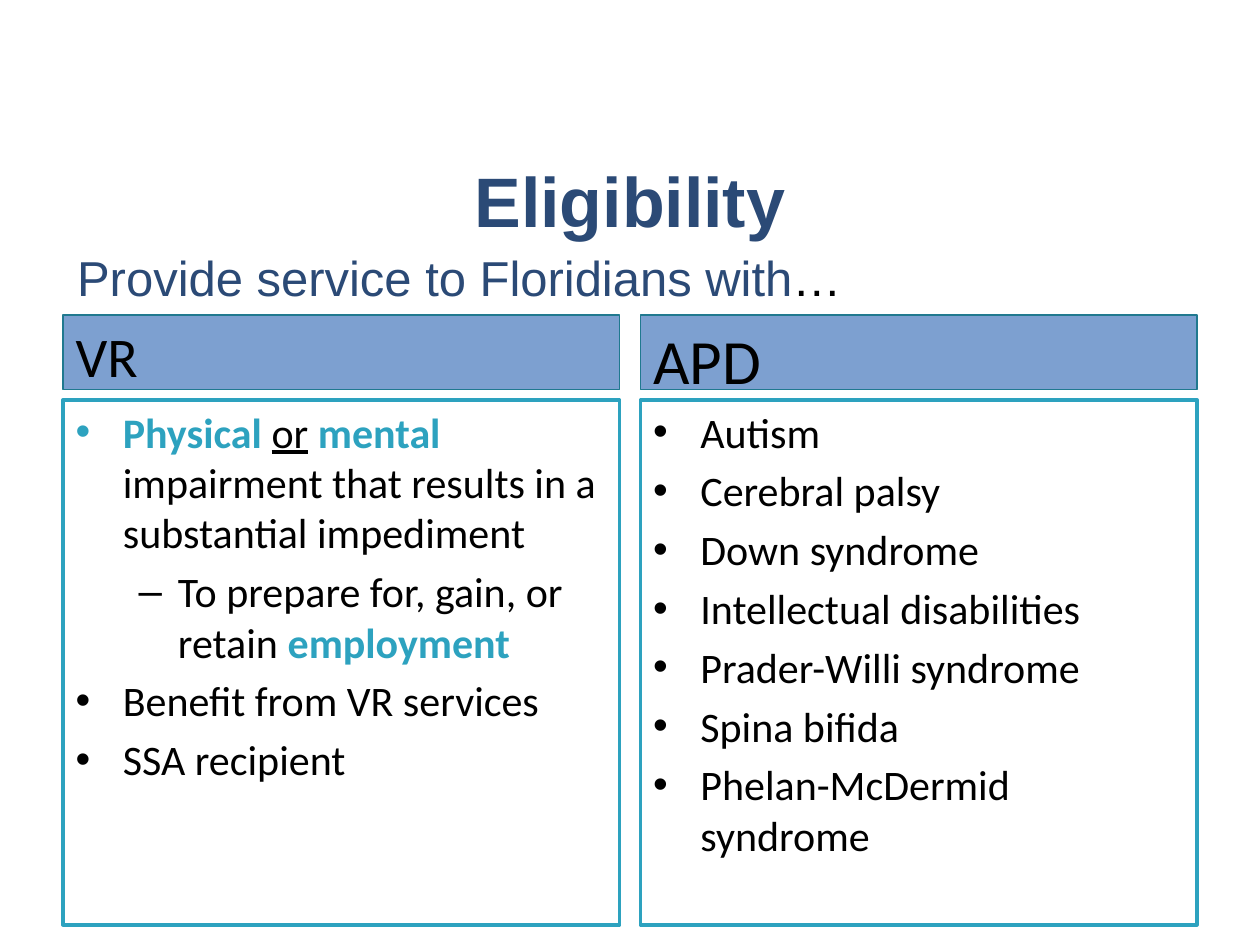
from pptx import Presentation
from pptx.dml.color import RGBColor
from pptx.enum.text import MSO_ANCHOR as Anchor, MSO_AUTO_SIZE as AutoSize, PP_ALIGN as Align
from pptx.oxml.ns import qn
from pptx.util import Pt
from lxml.etree import SubElement

NAVY = RGBColor(0x2B, 0x4A, 0x76)
TEAL = RGBColor(0x2D, 0xA2, 0xBF)
DARK_TEAL = RGBColor(0x20, 0x79, 0x8F)
BLUE = RGBColor(0x7D, 0xA0, 0xD0)
BLACK = RGBColor(0, 0, 0)
WHITE = RGBColor(0xFF, 0xFF, 0xFF)

# Run formats
TITLE = {"name": "Arial", "size": Pt(40), "bold": True, "color": NAVY}
SUBTITLE = {"name": "Arial", "size": Pt(28), "color": NAVY}
HEADING = {"name": "Calibri", "bold": False, "color": BLACK}
BODY = HEADING | {"size": Pt(24)}
KEY = BODY | {"bold": True, "color": TEAL}
UNDERLINED = BODY | {"underline": True}

# Bullet character, left margin and hanging indent for each level
BULLETS = [("•", 27, -27), ("–", 58.5, -22.5)]

# Column grid
LEFT, COLUMN_STEP, COLUMN_WIDTH = 36, 330, 318

# Each column: heading, heading size, list of (level, runs)
COLUMNS = [
    ("VR", 32, [
        (0, [("Physical ", KEY), ("or", UNDERLINED), (" ", BODY), ("mental ", KEY),
             ("impairment that results in a substantial impediment", BODY)]),
        (1, [("To prepare for, gain, or retain ", BODY), ("employment", KEY)]),
        (0, [("Benefit from VR services", BODY)]),
        (0, [("SSA recipient", BODY)]),
    ]),
    ("APD", 36, [(0, [(name, BODY)]) for name in (
        "Autism", "Cerebral palsy", "Down syndrome", "Intellectual disabilities",
        "Prader-Willi syndrome", "Spina bifida", "Phelan-McDermid syndrome")]),
]


def place(shape, left, top, width, height):
    shape.left, shape.top, shape.width, shape.height = map(Pt, (left, top, width, height))


def prepare_frame(shape, anchor=Anchor.TOP):
    frame = shape.text_frame
    frame.word_wrap = True
    frame.auto_size = AutoSize.NONE
    frame.vertical_anchor = anchor
    return frame


def add_runs(paragraph, runs):
    for text, values in runs:
        run = paragraph.add_run()
        run.text = text
        for key, value in values.items():
            if key == "color":
                run.font.color.rgb = value
            else:
                setattr(run.font, key, value)


def style_box(shape, fill, line, line_width):
    shape.fill.solid()
    shape.fill.fore_color.rgb = fill
    shape.line.color.rgb = line
    shape.line.width = Pt(line_width)


def set_bullet(paragraph, level):
    character, margin, indent = BULLETS[level]
    paragraph.level = level
    properties = paragraph._p.get_or_add_pPr()
    properties.set("marL", str(Pt(margin)))
    properties.set("indent", str(Pt(indent)))
    SubElement(properties, qn("a:buFont")).set("typeface", "Arial")
    SubElement(properties, qn("a:buChar")).set("char", character)


def fill_heading(shape, left, text, size):
    place(shape, left, 180, COLUMN_WIDTH, 42.5)
    style_box(shape, BLUE, DARK_TEAL, 0.75)
    paragraph = prepare_frame(shape).paragraphs[0]
    paragraph.space_before = Pt(0)
    add_runs(paragraph, [(text, HEADING | {"size": Pt(size)})])


def fill_list(shape, left, items):
    place(shape, left, 228.5, COLUMN_WIDTH, 300)
    style_box(shape, WHITE, TEAL, 2)
    frame = prepare_frame(shape)
    for index, (level, runs) in enumerate(items):
        paragraph = frame.add_paragraph() if index else frame.paragraphs[0]
        set_bullet(paragraph, level)
        paragraph.space_before = Pt(4.8 if index else 0)
        add_runs(paragraph, runs)


def fill_title(shape):
    place(shape, 0, 90, 720, 48)
    paragraph = prepare_frame(shape, Anchor.MIDDLE).paragraphs[0]
    paragraph.alignment = Align.CENTER
    add_runs(paragraph, [("Eligibility", TITLE)])


def add_subtitle(slide):
    shape = slide.shapes.add_textbox(Pt(37), Pt(138), Pt(666), Pt(41))
    add_runs(prepare_frame(shape).paragraphs[0],
             [("Provide service to Floridians with", SUBTITLE),
              ("…", SUBTITLE | {"color": BLACK})])


def main():
    presentation = Presentation()
    presentation.slide_width, presentation.slide_height = Pt(720), Pt(540)

    # Comparison layout: a title, then a heading and a list for each column
    slide = presentation.slides.add_slide(presentation.slide_layouts[4])
    title, *boxes = slide.placeholders
    fill_title(title)
    for column, (heading, size, items) in enumerate(COLUMNS):
        left = LEFT + column * COLUMN_STEP
        heading_box, list_box = boxes[2 * column:2 * column + 2]
        fill_heading(heading_box, left, heading, size)
        fill_list(list_box, left, items)
    add_subtitle(slide)

    presentation.save("out.pptx")


if __name__ == "__main__":
    main()
